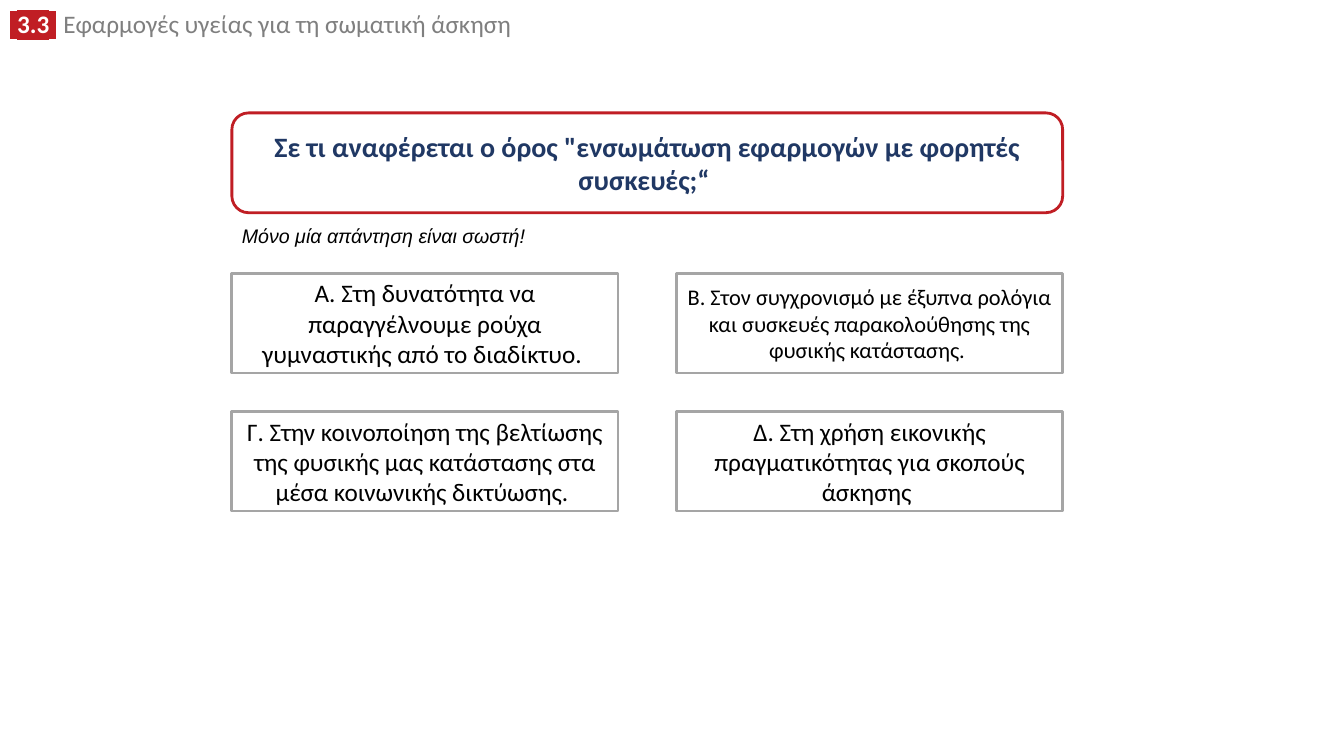
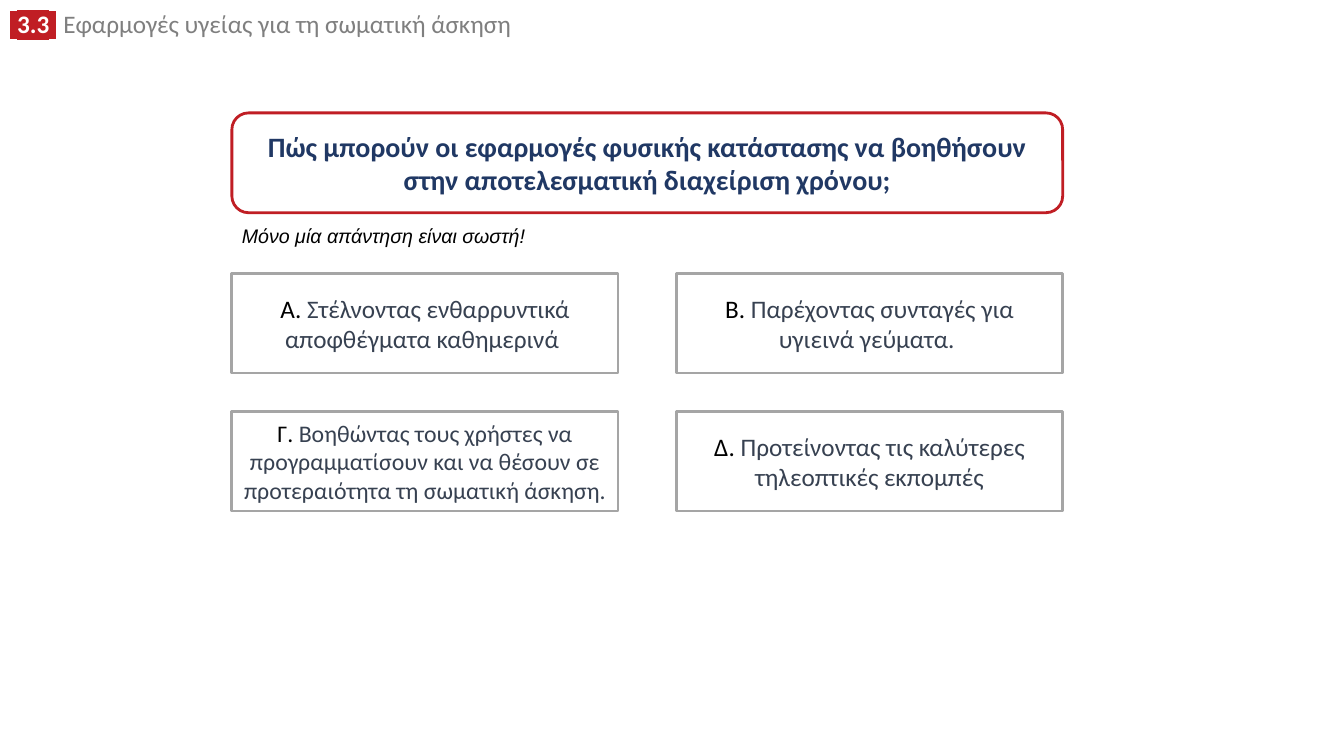
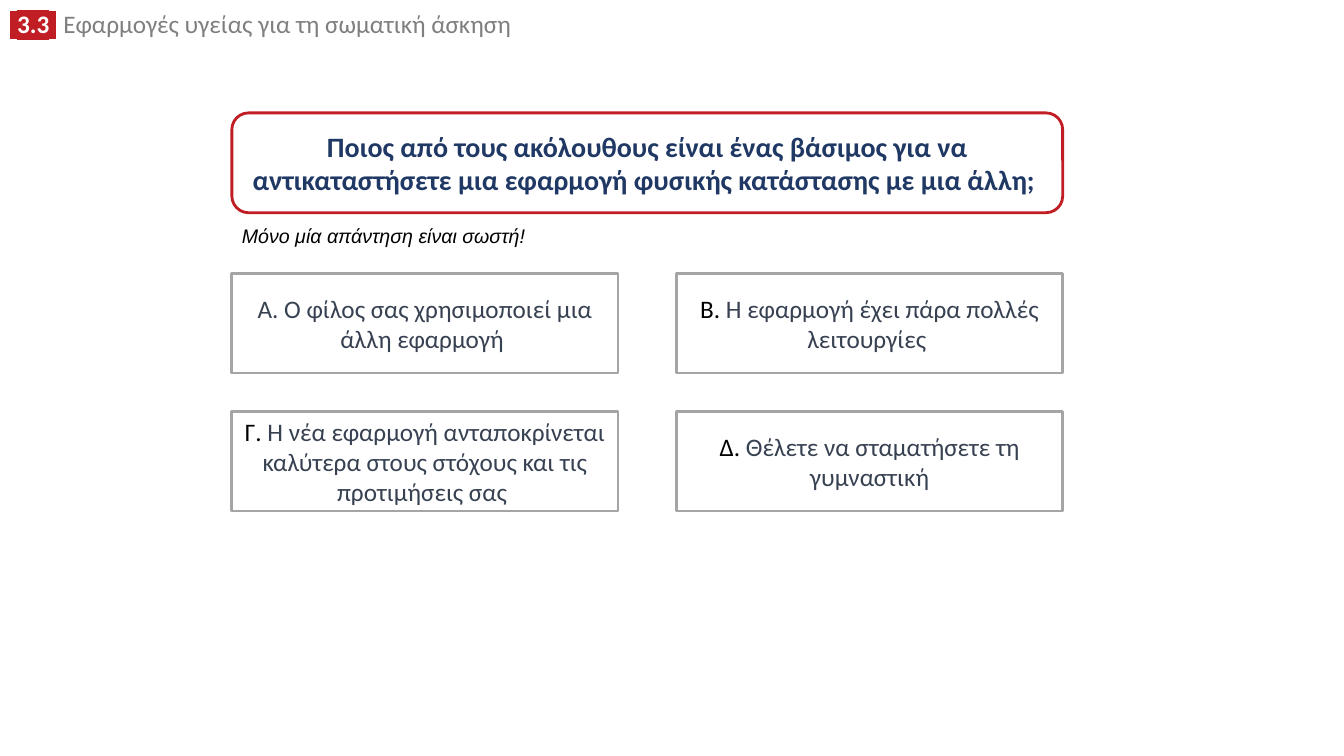
from pptx import Presentation
from pptx.dml.color import RGBColor
from pptx.enum.shapes import MSO_SHAPE
from pptx.enum.text import MSO_ANCHOR, MSO_AUTO_SIZE, PP_ALIGN
from pptx.oxml.ns import qn
from pptx.util import Inches, Pt
from lxml.etree import SubElement

RED = RGBColor(0xC0, 0x1E, 0x24)
NAVY = RGBColor(0x20, 0x38, 0x64)
SLATE = RGBColor(0x37, 0x41, 0x51)
GRAY = RGBColor(0x7F, 0x7F, 0x7F)
SILVER = RGBColor(0xA5, 0xA5, 0xA5)
BLACK = RGBColor(0, 0, 0)
WHITE = RGBColor(0xFF, 0xFF, 0xFF)

LEFT, CARD_W, CARD_H, COL_GAP = Inches(2.3), Inches(3.83), Inches(0.99), Inches(0.58)
COL_STEP = CARD_W + COL_GAP
QUESTION_TOP, NOTE_TOP = Inches(1.12), Inches(2.17)
ANSWERS_TOP, ROW_STEP = Inches(2.71), Inches(1.37)

BADGE = {"name": "Arial", "size": Pt(18), "bold": True}
TOPIC = {"name": "Calibri", "size": Pt(18), "bold": False}
QUESTION = {"name": "Calibri", "size": Pt(20), "bold": True}
NOTE = {"name": "Arial", "size": Pt(14), "italic": True}
HEADER = [
    (" ", WHITE, BADGE, RED),
    ("3.3", WHITE, BADGE | {"name": "Calibri"}, RED),
    (" ", WHITE, BADGE, RED),
    (" ", GRAY, TOPIC | {"name": "Arial"}, None),
    ("Εφαρμογές υγείας για τη σωματική άσκηση", GRAY, TOPIC, None),
]

QUIZ = [
    ("Σε τι αναφέρεται ο όρος \"ενσωμάτωση εφαρμογών με φορητές συσκευές;“ ", [
        ("Α. ", "Στη δυνατότητα να παραγγέλνουμε ρούχα γυμναστικής από το διαδίκτυο. ", 18, BLACK, BLACK),
        ("Β. ", "Στον συγχρονισμό με έξυπνα ρολόγια και συσκευές παρακολούθησης της φυσικής κατάστασης. ", 16, BLACK, BLACK),
        ("Γ. ", "Στην κοινοποίηση της βελτίωσης της φυσικής μας κατάστασης στα μέσα κοινωνικής δικτύωσης. ", 18, BLACK, BLACK),
        ("Δ. ", "Στη χρήση εικονικής πραγματικότητας για σκοπούς άσκησης ", 18, BLACK, BLACK),
    ]),
    ("Πώς μπορούν οι εφαρμογές φυσικής κατάστασης να βοηθήσουν στην αποτελεσματική διαχείριση χρόνου;", [
        ("Α. ", "Στέλνοντας ενθαρρυντικά αποφθέγματα καθημερινά ", 18, BLACK, SLATE),
        ("Β. ", "Παρέχοντας συνταγές για υγιεινά γεύματα. ", 18, BLACK, SLATE),
        ("Γ. ", "Βοηθώντας τους χρήστες να προγραμματίσουν και να θέσουν σε προτεραιότητα τη σωματική άσκηση. ", 17, BLACK, SLATE),
        ("Δ. ", "Προτείνοντας τις καλύτερες τηλεοπτικές εκπομπές", 18, BLACK, SLATE),
    ]),
    ("Ποιος από τους ακόλουθους είναι ένας βάσιμος για να αντικαταστήσετε μια εφαρμογή φυσικής κατάστασης με μια άλλη; ", [
        ("Α. ", "Ο φίλος σας χρησιμοποιεί μια άλλη εφαρμογή ", 18, SLATE, SLATE),
        ("Β. ", "Η εφαρμογή έχει πάρα πολλές λειτουργίες ", 18, BLACK, SLATE),
        ("Γ. ", "Η νέα εφαρμογή ανταποκρίνεται καλύτερα στους στόχους και τις προτιμήσεις σας ", 18, BLACK, SLATE),
        ("Δ. ", "Θέλετε να σταματήσετε τη γυμναστική", 18, BLACK, SLATE),
    ]),
]


def add_run(p, text, color, fmt, highlight=None):
    r = p.add_run()
    r.text = text
    for name, value in fmt.items():
        setattr(r.font, name, value)
    r.font.color.rgb = color
    if highlight is not None:
        rPr = r.font._element
        mark = SubElement(rPr, qn("a:highlight"))
        SubElement(mark, qn("a:srgbClr"), val=str(highlight))
        rPr.find(qn("a:solidFill")).addnext(mark)


def add_card(s, kind, left, top, width, line):
    sp = s.shapes.add_shape(kind, left, top, width, CARD_H)
    sp.shadow.inherit = False
    sp.fill.solid()
    sp.fill.fore_color.rgb = WHITE
    sp.line.color.rgb = line
    sp.line.width = Pt(2)
    tf = sp.text_frame
    tf.word_wrap = True
    tf.vertical_anchor = MSO_ANCHOR.MIDDLE
    p = tf.paragraphs[0]
    p.alignment = PP_ALIGN.CENTER
    return p


prs = Presentation()
prs.slide_width, prs.slide_height = Inches(13.33), Inches(7.5)

for question, answers in QUIZ:
    s = prs.slides.add_slide(prs.slide_layouts[5])

    title = s.shapes.title
    title.left, title.top, title.width, title.height = 0, Inches(0.09), Inches(9.52), Inches(0.35)
    tf = title.text_frame
    tf.word_wrap = True
    tf.vertical_anchor = MSO_ANCHOR.TOP
    tf.auto_size = MSO_AUTO_SIZE.SHAPE_TO_FIT_TEXT
    p = tf.paragraphs[0]
    p.alignment = PP_ALIGN.LEFT
    p.line_spacing = 0.8
    for run in HEADER:
        add_run(p, *run)

    p = add_card(s, MSO_SHAPE.ROUNDED_RECTANGLE, LEFT, QUESTION_TOP, COL_STEP + CARD_W, RED)
    add_run(p, question, NAVY, QUESTION)

    note = s.shapes.add_textbox(LEFT, NOTE_TOP, Inches(3.04), Inches(0.34))
    tf = note.text_frame
    tf.word_wrap = False
    tf.auto_size = MSO_AUTO_SIZE.SHAPE_TO_FIT_TEXT
    add_run(tf.paragraphs[0], "Μόνο μία απάντηση είναι σωστή!", BLACK, NOTE)

    for i, (letter, answer, size, letter_color, answer_color) in enumerate(answers):
        row, col = divmod(i, 2)
        p = add_card(s, MSO_SHAPE.RECTANGLE, LEFT + col * COL_STEP,
                     ANSWERS_TOP + row * ROW_STEP, CARD_W, SILVER)
        fmt = {"name": "Calibri", "size": Pt(size)}
        add_run(p, letter, letter_color, fmt)
        add_run(p, answer, answer_color, fmt)

prs.save("out.pptx")
